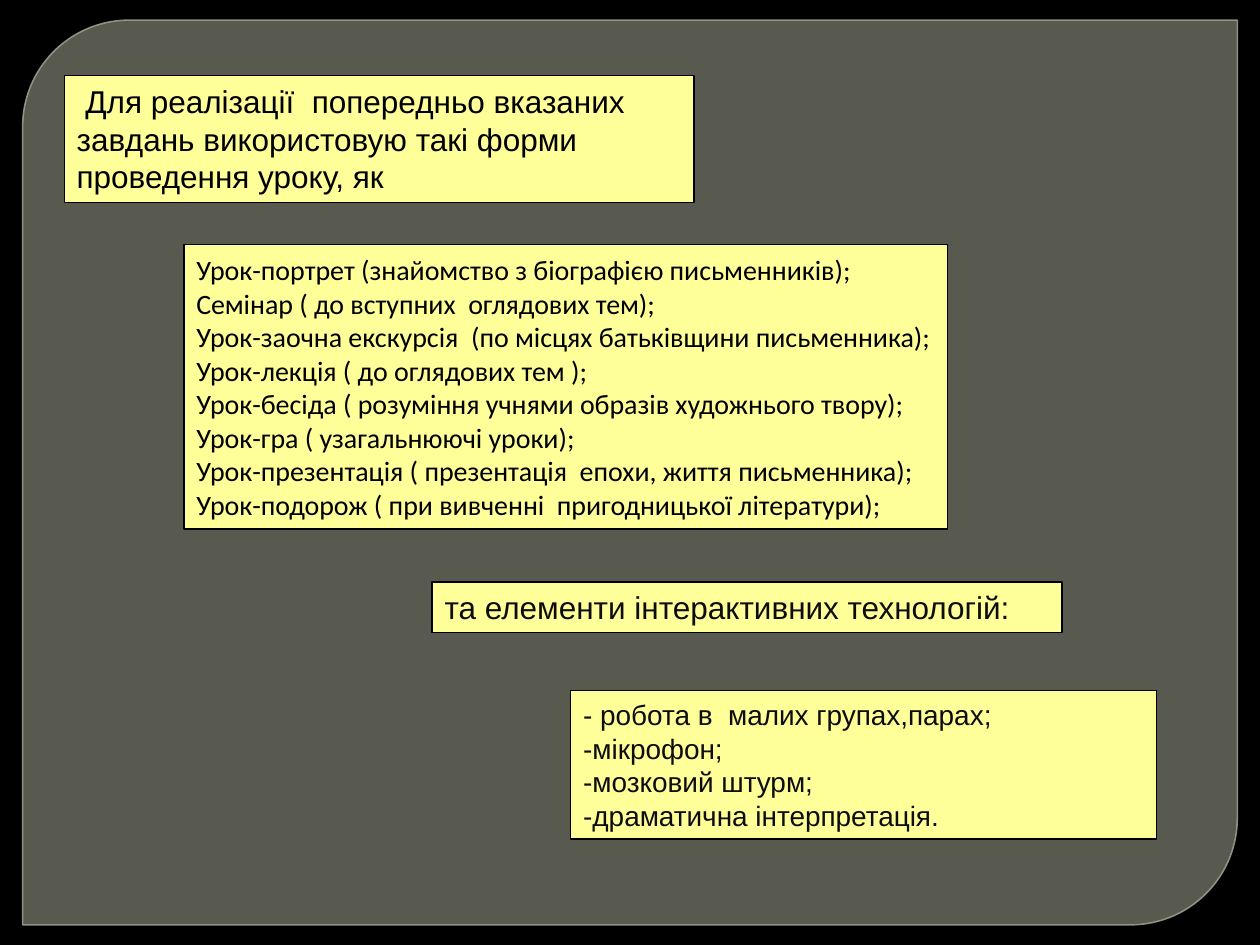
from dataclasses import dataclass

from lxml import etree
from pptx import Presentation
from pptx import util as u
from pptx.dml.color import RGBColor
from pptx.enum import shapes, text
from pptx.oxml.ns import qn


@dataclass(frozen=True)
class Theme:
    background: RGBColor = RGBColor.from_string("000000")
    panel: RGBColor = RGBColor.from_string("888B7B")
    panel_line: RGBColor = RGBColor.from_string("9DA090")
    note: RGBColor = RGBColor.from_string("FFFF99")
    black: RGBColor = RGBColor.from_string("000000")
    soft_black: RGBColor = RGBColor.from_string("0D0D0D")
    heading: u.Pt = u.Pt(18)
    body: u.Pt = u.Pt(16)


theme = Theme()
presentation = Presentation()
presentation.slide_width, presentation.slide_height = u.Inches(10), u.Inches(7.5)
slide = presentation.slides.add_slide(presentation.slide_layouts[6])
slide.background.fill.solid()
slide.background.fill.fore_color.rgb = theme.background


def add_box(kind, box, fill, line, line_width):
    shape = slide.shapes.add_shape(kind, *(u.Inches(length) for length in box))
    shape.shadow.inherit = False
    shape.fill.solid()
    shape.fill.fore_color.rgb = fill
    shape.line.color.rgb = line
    shape.line.width = u.Pt(line_width)
    return shape


def add_note(lines, box, size=theme.body, font="Arial", color=theme.black,
             anchor=text.MSO_ANCHOR.TOP):
    shape = add_box(shapes.MSO_SHAPE.RECTANGLE, box, theme.note, theme.black, 0.75)
    frame = shape.text_frame
    frame.word_wrap = True
    frame.auto_size = text.MSO_AUTO_SIZE.SHAPE_TO_FIT_TEXT
    frame.vertical_anchor = anchor
    frame.text = "\n".join(lines)
    for paragraph in frame.paragraphs:
        paragraph.alignment = text.PP_ALIGN.LEFT
        run_font = paragraph.runs[0].font
        run_font.name, run_font.size = font, size
        run_font.color.rgb = color


panel = add_box(shapes.MSO_SHAPE.ROUND_2_DIAG_RECTANGLE, (0.18, 0.16, 9.64, 7.18),
                theme.panel, theme.panel_line, 0.87)
panel.adjustments[0], panel.adjustments[1] = 0.118, 0
# Opacity of the fill, then of the line
for color, percent in zip(panel.element.spPr.iter(qn("a:srgbClr")), (65, 88)):
    etree.SubElement(color, qn("a:alpha"), val=str(percent * 1000))

add_note(
    [
        "Урок-портрет (знайомство з біографією письменників);",
        "Семінар ( до вступних  оглядових тем);",
        "Урок-заочна екскурсія  (по місцях батьківщини письменника);",
        "Урок-лекція ( до оглядових тем );",
        "Урок-бесіда ( розуміння учнями образів художнього твору);",
        "Урок-гра ( узагальнюючі уроки);",
        "Урок-презентація ( презентація  епохи, життя письменника);",
        "Урок-подорож ( при вивченні  пригодницької літератури);",
    ],
    (1.46, 1.94, 6.06, 2.26), font="Calibri", anchor=text.MSO_ANCHOR.MIDDLE,
)
add_note(
    [
        "- робота в  малих групах,парах;",
        "-мікрофон;",
        "-мозковий штурм;",
        "-драматична інтерпретація.",
    ],
    (4.53, 5.48, 4.65, 1.18), color=theme.soft_black, anchor=text.MSO_ANCHOR.MIDDLE,
)
add_note(
    [" Для реалізації  попередньо вказаних завдань використовую такі форми  "
     "проведення уроку, як"],
    (0.51, 0.6, 5, 1.01), size=theme.heading,
)
add_note(["та елементи інтерактивних технологій:"], (3.43, 4.62, 5, 0.4),
         size=theme.heading, color=theme.soft_black)

presentation.save("out.pptx")
